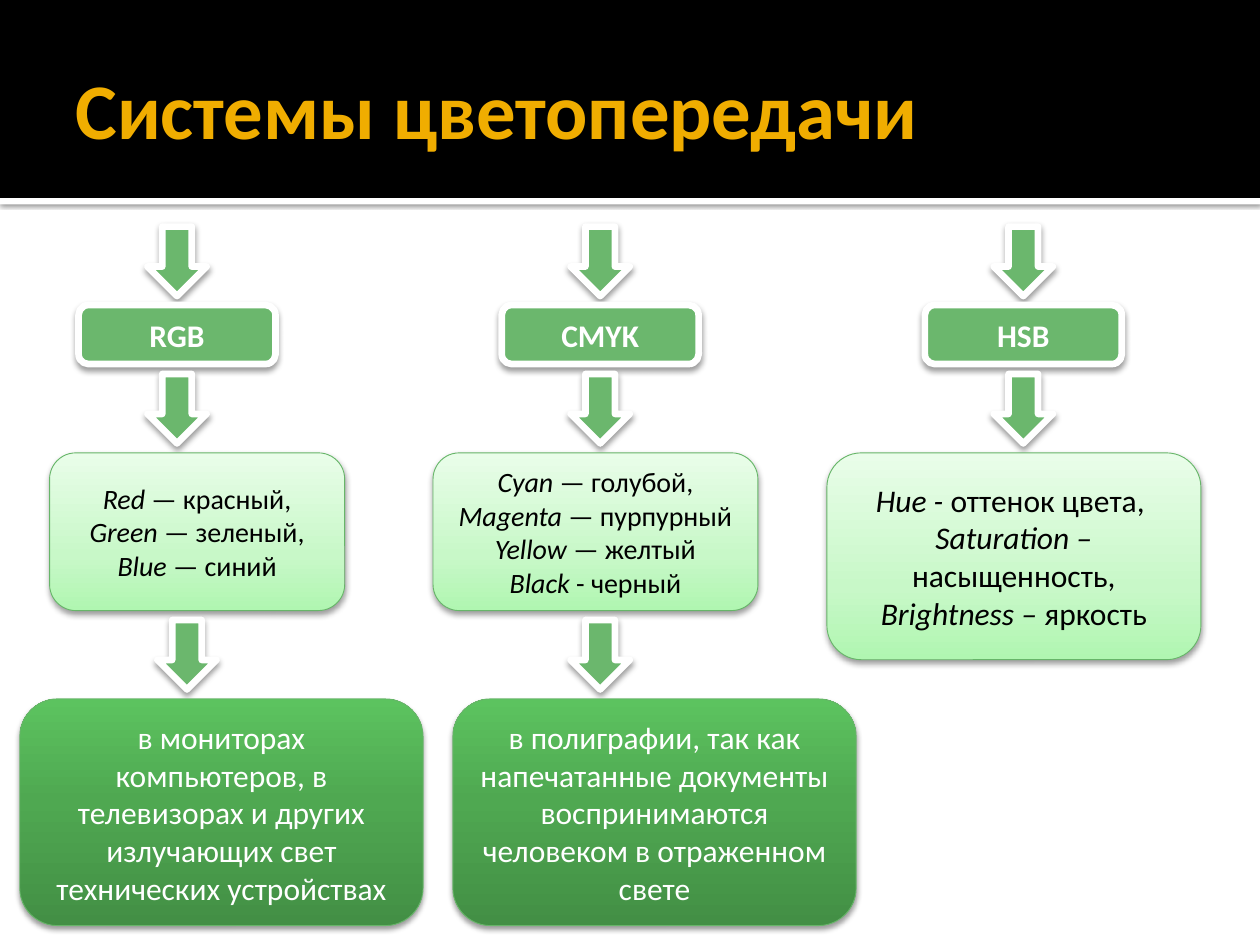
from dataclasses import dataclass
from typing import Optional

from lxml.etree import SubElement
from pptx import Presentation
from pptx.dml.color import RGBColor
from pptx.enum.shapes import MSO_SHAPE as Preset
from pptx.enum.text import MSO_ANCHOR as Anchor, PP_ALIGN as Align
from pptx.oxml.ns import qn
from pptx.util import Cm, Pt

COLORS = {
    "black": "000000",
    "white": "FFFFFF",
    "amber": "F0AD00",
    "green": "6BB76D",
    "edge": "67B569",
}
PALE = ((0, "B0F6B1"), (35, "C8F8C8"), (100, "E9FDE9"))
DEEP = ((0, "438F45"), (55, "4FA851"), (100, "5CC35F"))

FIRST_CENTER, COLUMN_PITCH = 3.57, 8.53
ARROW_W, ARROW_H = 1.19, 1.4
LABEL_W, LABEL_H = 3.97, 1.19
ENTRY_TOP, LABEL_TOP, DETAIL_ARROW_TOP = 4.57, 6.15, 7.54
DETAIL_TOP, USE_ARROW_TOP, USE_TOP = 9.13, 12.5, 14.09
USE_W, USE_H = 8.13, 4.57


@dataclass
class Shadow:
    alpha: int
    blur: float
    distance: float


@dataclass
class Use:
    text: str
    left: float
    arrow_center: float


@dataclass
class ColorSystem:
    name: str
    terms: list
    left: float
    width: float
    height: float
    size: int
    use: Optional[Use] = None


SYSTEMS = [
    ColorSystem(
        "RGB",
        [[("Red ", "— красный, "), ("Green ", "— зеленый, "), ("Blue ", "— синий")]],
        1.0, 5.95, 3.18, 16,
        Use("в мониторах компьютеров, в телевизорах и других излучающих свет "
            "технических устройствах", 0.4, 3.77),
    ),
    ColorSystem(
        "CMYK",
        [[("Cyan ", "— голубой,")], [("Magenta ", "— пурпурный")],
         [("Yellow ", "— желтый")], [("Black ", "- черный")]],
        8.73, 6.55, 3.18, 16,
        Use("в полиграфии, так как напечатанные документы воспринимаются "
            "человеком в отраженном свете", 9.13, 12.1),
    ),
    ColorSystem(
        "HSB",
        [[("Hue - ", "оттенок цвета, ")], [("Saturation –", "насыщенность,")],
         [("Brightness – ", "яркость")]],
        16.67, 7.54, 4.17, 18,
    ),
]


def rgb(name: str) -> RGBColor:
    return RGBColor.from_string(COLORS[name])


def write(shape, paragraphs: list, *, size: float, color: str,
          bold: bool = False, align=Align.CENTER) -> None:
    frame = shape.text_frame
    frame.word_wrap = True
    frame.vertical_anchor = Anchor.MIDDLE
    for number, pairs in enumerate(paragraphs):
        paragraph = frame.add_paragraph() if number else frame.paragraphs[0]
        paragraph.alignment = align
        for term, meaning in pairs:
            for text, italic in ((term, True), (meaning, False)):
                if not text:
                    continue
                run = paragraph.add_run()
                run.text = text
                run.font.name = "Calibri"
                run.font.size = Pt(size)
                run.font.bold = bold
                run.font.italic = italic
                run.font.color.rgb = rgb(color)


def plain(text: str) -> list:
    return [[("", text)]]


def cast_shadow(shape, shadow: Shadow) -> None:
    effects = shape.element.spPr.find(qn("a:effectLst"))
    outer = SubElement(effects, qn("a:outerShdw"), blurRad=str(Pt(shadow.blur)),
                       dist=str(Pt(shadow.distance)), dir="5400000", rotWithShape="0")
    tint = SubElement(outer, qn("a:srgbClr"), val=COLORS["black"])
    SubElement(tint, qn("a:alpha"), val=str(shadow.alpha * 1000))


def fill_gradient(shape, stops: tuple) -> None:
    shape.fill.gradient()
    shape.fill.gradient_angle = 90
    stop_list = shape.element.spPr.find(qn("a:gradFill")).find(qn("a:gsLst"))
    for old_stop in list(stop_list):
        stop_list.remove(old_stop)
    for position, color in stops:
        stop = SubElement(stop_list, qn("a:gs"), pos=str(position * 1000))
        SubElement(stop, qn("a:srgbClr"), val=color)


def add_block(slide, preset, left: float, top: float, width: float, height: float, *,
              fill, line: Optional[tuple] = None, shadow: Optional[Shadow] = None):
    block = slide.shapes.add_shape(preset, Cm(left), Cm(top), Cm(width), Cm(height))
    if isinstance(fill, tuple):
        fill_gradient(block, fill)
    else:
        block.fill.solid()
        block.fill.fore_color.rgb = rgb(fill)
    if line:
        block.line.color.rgb = rgb(line[0])
        block.line.width = Pt(line[1])
    else:
        block.line.fill.background()
    block.shadow.inherit = False
    if shadow:
        cast_shadow(block, shadow)
    return block


def add_marker(slide, preset, center: float, top: float, width: float, height: float):
    return add_block(slide, preset, center - width / 2, top, width, height,
                     fill="green", line=("white", 3.82), shadow=Shadow(38, 3.5, 2))


def add_arrow(slide, center: float, top: float) -> None:
    add_marker(slide, Preset.DOWN_ARROW, center, top, ARROW_W, ARROW_H)


def add_header(slide) -> None:
    add_block(slide, Preset.RECTANGLE, 0, 3.99, 25.4, 0.13,
              fill="white", shadow=Shadow(60, 2.5, 0.8))
    add_block(slide, Preset.RECTANGLE, 0, 0, 25.4, 3.99, fill="black")
    title = slide.shapes.title
    title.left, title.top, title.width, title.height = Cm(1.27), Cm(0.43), Cm(22.86), Cm(3.48)
    title.element.getparent().append(title.element)
    frame = title.text_frame
    frame.margin_left = Cm(0.25)
    frame.margin_top = frame.margin_right = frame.margin_bottom = Cm(0.13)
    write(title, plain("Системы цветопередачи"), size=45, color="amber",
          bold=True, align=Align.LEFT)


def add_system(slide, system: ColorSystem, center: float) -> None:
    add_arrow(slide, center, ENTRY_TOP)
    label = add_marker(slide, Preset.ROUNDED_RECTANGLE, center, LABEL_TOP, LABEL_W, LABEL_H)
    write(label, plain(system.name), size=18, color="white", bold=True)
    add_arrow(slide, center, DETAIL_ARROW_TOP)
    detail = add_block(slide, Preset.ROUNDED_RECTANGLE, system.left, DETAIL_TOP,
                       system.width, system.height, fill=PALE, line=("edge", 0.5),
                       shadow=Shadow(38, 3.5, 2))
    write(detail, system.terms, size=system.size, color="black")
    if system.use:
        add_arrow(slide, system.use.arrow_center, USE_ARROW_TOP)
        use = add_block(slide, Preset.ROUNDED_RECTANGLE, system.use.left, USE_TOP,
                        USE_W, USE_H, fill=DEEP, line=("edge", 0.5),
                        shadow=Shadow(38, 3.1, 2))
        write(use, plain(system.use.text), size=18, color="white")


def main() -> None:
    deck = Presentation()
    deck.slide_width, deck.slide_height = Cm(25.4), Cm(19.05)
    slide = deck.slides.add_slide(deck.slide_layouts[5])
    add_header(slide)
    for column, system in enumerate(SYSTEMS):
        add_system(slide, system, FIRST_CENTER + column * COLUMN_PITCH)
    deck.save("out.pptx")


if __name__ == "__main__":
    main()
